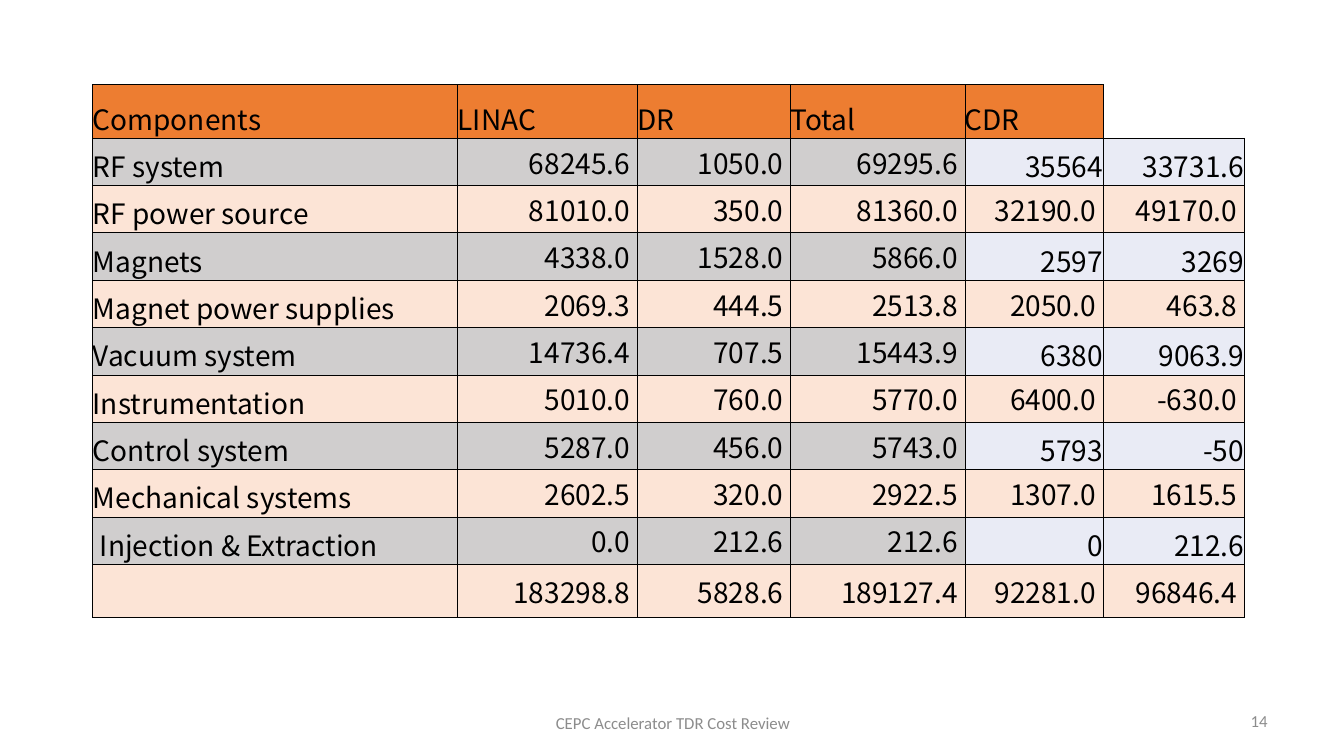
from lxml import etree
from pptx import Presentation
from pptx.dml.color import RGBColor
from pptx.enum import text
from pptx.oxml import ns
from pptx.util import Inches, Pt

COLORS = {"header": "ED7D31", "gray": "D0CECE", "peach": "FCE4D6",
          "pale": "E9EBF5", "ink": "000000", "footer": "8C8C8C"}
COSTS = [
    ("Components", "LINAC", "DR", "Total", "CDR", ""),
    ("RF system", "68245.6", "1050.0", "69295.6", "35564", "33731.6"),
    ("RF power source", "81010.0", "350.0", "81360.0", "32190.0", "49170.0"),
    ("Magnets", "4338.0", "1528.0", "5866.0", "2597", "3269"),
    ("Magnet power supplies", "2069.3", "444.5", "2513.8", "2050.0", "463.8"),
    ("Vacuum system", "14736.4", "707.5", "15443.9", "6380", "9063.9"),
    ("Instrumentation", "5010.0", "760.0", "5770.0", "6400.0", "-630.0"),
    ("Control system", "5287.0", "456.0", "5743.0", "5793", "-50"),
    ("Mechanical systems", "2602.5", "320.0", "2922.5", "1307.0", "1615.5"),
    ("Injection & Extraction", "0.0", "212.6", "212.6", "0", "212.6"),
    ("", "183298.8", "5828.6", "189127.4", "92281.0", "96846.4"),
]
COLUMN_WIDTHS = [3.62, 1.78, 1.52, 1.73, 1.37, 1.4]
EDGE_ROW, INNER_ROW = 0.53, 0.47
INDENT = 0.07
FOOTERS = [
    ("14", (9.56, 6.95, 3.11, 0.4), text.PP_ALIGN.RIGHT),
    ("CEPC Accelerator TDR Cost Review", (3.92, 6.98, 5.51, 0.39), text.PP_ALIGN.CENTER),
]


def style(para, font, size, color, align):
    para.alignment = align
    para.font.name = font
    para.font.size = Pt(size)
    para.font.color.rgb = RGBColor.from_string(COLORS[color])


def add_borders(cell, sides):
    props = cell._tc.get_or_add_tcPr()
    for side in sides:
        line = etree.SubElement(props, ns.qn(f"a:ln{side}"), w=str(Pt(0.5)))
        fill = etree.SubElement(line, ns.qn("a:solidFill"))
        etree.SubElement(fill, ns.qn("a:srgbClr"), val=COLORS["ink"])


def fill_cell(cell, row, col, value):
    corner = row == 0 and col == len(COLUMN_WIDTHS) - 1
    pale = row % 2 == 1 and col >= 4
    number = row > 0 and col > 0
    add_borders(cell, "LB" if corner else "LRTB")
    if corner:
        cell.fill.background()
    else:
        color = "header" if row == 0 else "pale" if pale else "gray" if row % 2 else "peach"
        cell.fill.solid()
        cell.fill.fore_color.rgb = RGBColor.from_string(COLORS[color])
    padded = number and not pale
    cell.margin_top = cell.margin_bottom = 0
    cell.margin_left = Inches(INDENT if value.startswith("Injection") else 0)
    cell.margin_right = Inches(INDENT if padded else 0)
    cell.vertical_anchor = text.MSO_ANCHOR.MIDDLE if padded else text.MSO_ANCHOR.BOTTOM
    cell.text = value
    style(cell.text_frame.paragraphs[0], "Noto Sans CJK SC", 20, "ink",
          text.PP_ALIGN.RIGHT if number else text.PP_ALIGN.LEFT)


def main():
    deck = Presentation()
    deck.slide_width, deck.slide_height = Inches(13.33), Inches(7.5)
    page = deck.slides.add_slide(deck.slide_layouts[6])

    for words, place, align in FOOTERS:
        box = page.shapes.add_textbox(*map(Inches, place))
        frame = box.text_frame
        frame.word_wrap = True
        frame.vertical_anchor = text.MSO_ANCHOR.MIDDLE
        frame.text = words
        style(frame.paragraphs[0], "Calibri", 12, "footer", align)

    last = len(COSTS) - 1
    heights = [EDGE_ROW if row in (0, last) else INNER_ROW for row in range(len(COSTS))]
    table = page.shapes.add_table(
        len(COSTS), len(COLUMN_WIDTHS), Inches(0.92), Inches(0.84),
        Inches(sum(COLUMN_WIDTHS)), Inches(sum(heights))).table
    table.first_row = table.horz_banding = False
    for column, width in zip(table.columns, COLUMN_WIDTHS):
        column.width = Inches(width)
    for row, (values, height) in enumerate(zip(COSTS, heights)):
        table.rows[row].height = Inches(height)
        for col, value in enumerate(values):
            fill_cell(table.cell(row, col), row, col, value)

    deck.save("out.pptx")


if __name__ == "__main__":
    main()
